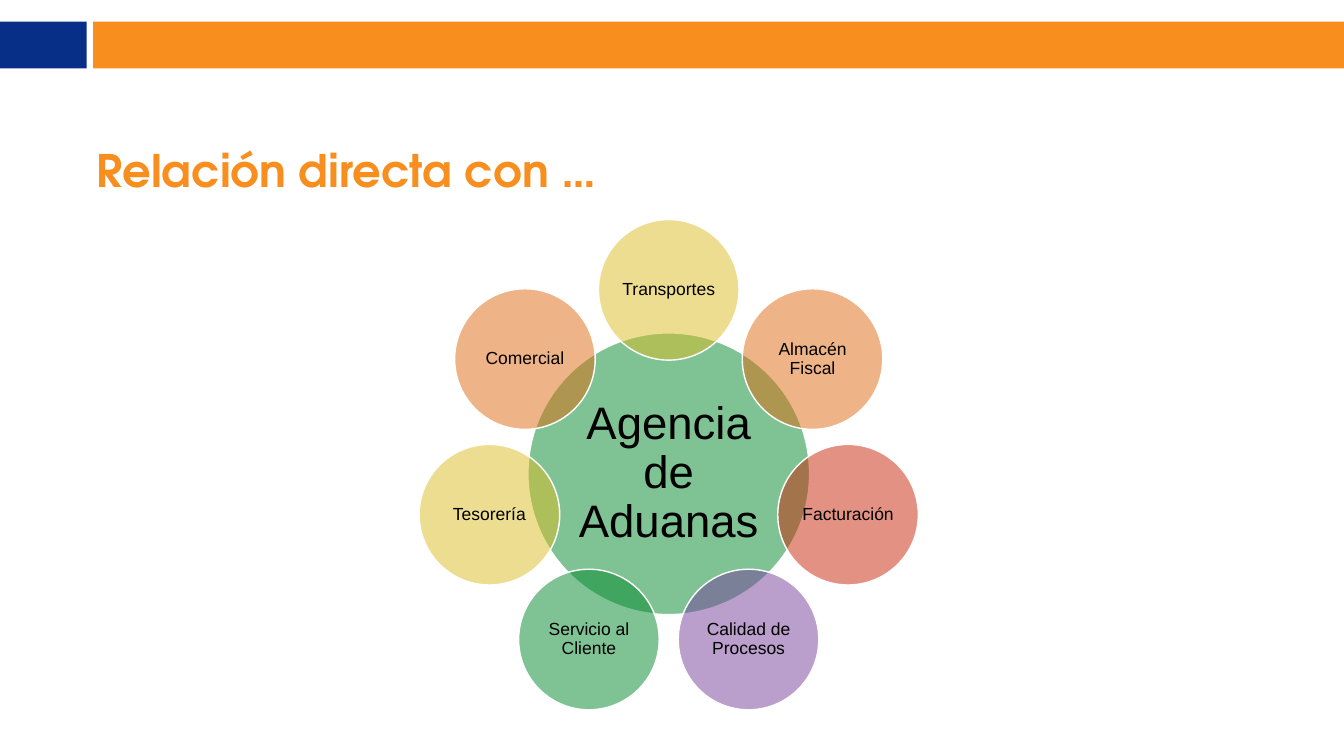
"""Build a slide with a radial diagram of the areas linked to the customs agency."""
import math
from typing import NamedTuple

from lxml import etree
from pptx import Presentation
from pptx import util as u
from pptx.dml.color import RGBColor
from pptx.enum import shapes, text
from pptx.oxml import ns

NAVY = RGBColor(0x07, 0x2F, 0x87)
ORANGE = RGBColor(0xF7, 0x8E, 0x1E)
GREEN = RGBColor(0x00, 0x88, 0x2B)
YELLOW = RGBColor(0xDC, 0xBD, 0x23)
RUST = RGBColor(0xDE, 0x6A, 0x10)
RED = RGBColor(0xC8, 0x25, 0x06)
PURPLE = RGBColor(0x77, 0x3F, 0x9B)
WHITE = RGBColor(0xFF, 0xFF, 0xFF)
BLACK = RGBColor(0x00, 0x00, 0x00)

SLIDE_WIDTH, SLIDE_HEIGHT = 26.67, 15
CENTER_X, CENTER_Y = 13.27, 9.4
RING_RADIUS = 3.65
HUB_DIAMETER, AREA_DIAMETER = 5.59, 2.79


class Bar(NamedTuple):
    left: float
    width: float
    color: RGBColor


class Area(NamedTuple):
    label: str
    color: RGBColor


BARS = [Bar(0, 1.72, NAVY), Bar(1.85, SLIDE_WIDTH - 1.85, ORANGE)]
HUB = Area("Agencia de Aduanas", GREEN)
AREAS = [
    Area("Transportes", YELLOW),
    Area("Almacén Fiscal", RUST),
    Area("Facturación", RED),
    Area("Calidad de Procesos", PURPLE),
    Area("Servicio al Cliente", GREEN),
    Area("Tesorería", YELLOW),
    Area("Comercial", RUST),
]


def apply_format(target, values: dict) -> None:
    for name, value in values.items():
        setattr(target, name, value)


def write_text(shape, label: str, size: float, font: str, color: RGBColor,
               margin: float, bold: bool = False, line_spacing: float = 1.0) -> None:
    frame = shape.text_frame
    frame.text = label
    frame_format = {"word_wrap": True, "auto_size": text.MSO_AUTO_SIZE.NONE,
                    "vertical_anchor": text.MSO_ANCHOR.MIDDLE}
    for side in ("left", "top", "right", "bottom"):
        frame_format[f"margin_{side}"] = u.Inches(margin)
    apply_format(frame, frame_format)
    paragraph = frame.paragraphs[0]
    apply_format(paragraph, {"alignment": text.PP_ALIGN.CENTER,
                             "line_spacing": line_spacing, "space_before": u.Pt(0)})
    run_font = paragraph.runs[0].font
    apply_format(run_font, {"size": u.Pt(size), "name": font, "bold": bold})
    run_font.color.rgb = color


def add_filled_shape(slide, kind, left: float, top: float, width: float,
                     height: float, color: RGBColor):
    shape = slide.shapes.add_shape(kind, *map(u.Inches, (left, top, width, height)))
    shape.shadow.inherit = False
    shape.fill.solid()
    shape.fill.fore_color.rgb = color
    return shape


def add_bar(slide, bar: Bar) -> None:
    shape = add_filled_shape(slide, shapes.MSO_SHAPE.RECTANGLE,
                             bar.left, 0.43, bar.width, 0.93, bar.color)
    shape.line.fill.background()


def add_circle(slide, area: Area, x: float, y: float, diameter: float,
               size: float, margin: float) -> None:
    shape = add_filled_shape(slide, shapes.MSO_SHAPE.OVAL, x - diameter / 2,
                             y - diameter / 2, diameter, diameter, area.color)
    color = shape.fill._xPr.find(ns.qn("a:solidFill"))[0]
    etree.SubElement(color, ns.qn("a:alpha"), val="50000")
    shape.line.color.rgb = WHITE
    shape.line.width = u.Pt(2)
    write_text(shape, area.label, size, "Arial", BLACK, margin, line_spacing=0.9)


def add_title(slide) -> None:
    title = slide.shapes.title
    apply_format(title, {"left": u.Inches(1.05), "top": u.Inches(2.78),
                         "width": u.Inches(11.65), "height": u.Inches(1.18)})
    write_text(title, "Relación directa con …", 64, "TeX Gyre Adventor",
               ORANGE, 0.05, bold=True)


def main() -> None:
    presentation = Presentation()
    presentation.slide_width = u.Inches(SLIDE_WIDTH)
    presentation.slide_height = u.Inches(SLIDE_HEIGHT)
    slide = presentation.slides.add_slide(presentation.slide_layouts[5])
    for bar in BARS:
        add_bar(slide, bar)
    add_circle(slide, HUB, CENTER_X, CENTER_Y, HUB_DIAMETER, 65, 0.09)
    for index, area in enumerate(AREAS):
        angle = 2 * math.pi * index / len(AREAS)
        add_circle(slide, area, CENTER_X + RING_RADIUS * math.sin(angle),
                   CENTER_Y - RING_RADIUS * math.cos(angle), AREA_DIAMETER, 25, 0.03)
    add_title(slide)
    presentation.save("out.pptx")


if __name__ == "__main__":
    main()
